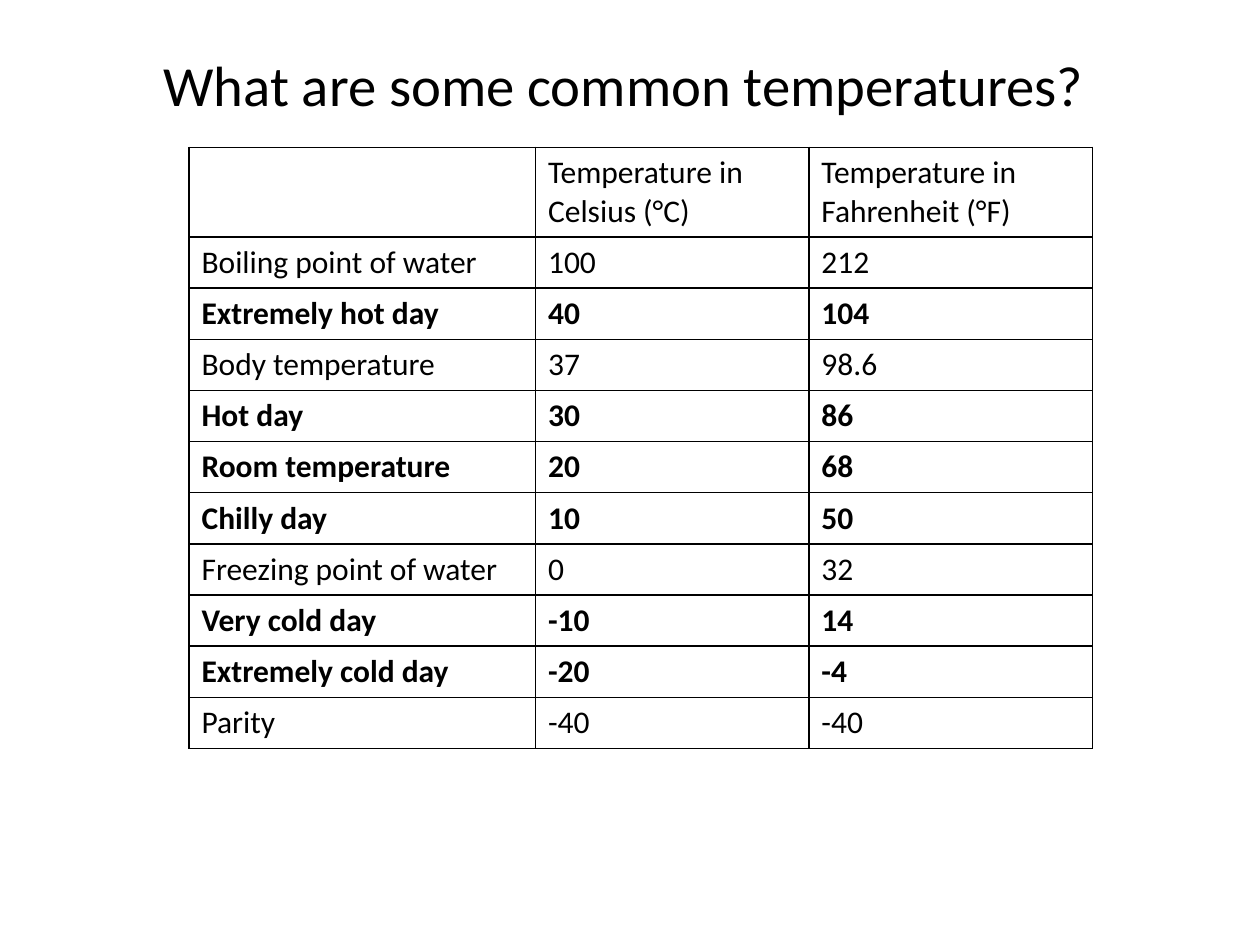
from lxml.etree import SubElement
from pptx import Presentation
from pptx.dml.color import RGBColor as Color
from pptx.enum.text import MSO_ANCHOR as Anchor, PP_ALIGN as Align
from pptx.oxml.ns import qn
from pptx.util import Inches, Pt

# Content
TITLE = "What are some common temperatures? "
HEADER = ("", "Temperature in Celsius (°C)", "Temperature in Fahrenheit (°F)")
TEMPERATURES = [  # label, Celsius, Fahrenheit, bold
    ("Boiling point of water", "100", "212", False),
    ("Extremely hot day", "40", "104", True),
    ("Body temperature", "37", "98.6", False),
    ("Hot day", "30", "86", True),
    ("Room temperature", "20", "68", True),
    ("Chilly day", "10", "50", True),
    ("Freezing point of water", "0", "32", False),
    ("Very cold day", "-10", "14", True),
    ("Extremely cold day", "-20", "-4", True),
    ("Parity", "-40", "-40", False),
]

# Look and layout
THEME = {"font": "Calibri", "ink": "000000", "title": 32.4, "body": 18, "border": 1}
COLUMN_WIDTHS = (2.75, 2.17, 2.25)
HEADER_HEIGHT, ROW_HEIGHT = 0.7, 0.406
TABLE_LEFT, TABLE_TOP = 1.5, 1.17
TITLE_BOX = (0.75, 0.33, 8.5, 0.67)


def write(para, text, size, bold=False):
    span = para.add_run()
    span.text = text
    formats = {"name": THEME["font"], "size": Pt(size), "bold": bold}
    for name, value in formats.items():
        setattr(span.font, name, value)
    span.font.color.rgb = Color.from_string(THEME["ink"])


def add_borders(cell):
    properties = cell._tc.get_or_add_tcPr()
    for side in ("lnL", "lnR", "lnT", "lnB"):
        line = SubElement(properties, qn(f"a:{side}"), w=str(Pt(THEME["border"])))
        fill = SubElement(line, qn("a:solidFill"))
        SubElement(fill, qn("a:srgbClr"), val=THEME["ink"])


def add_temperature_table(page):
    rows = [(*HEADER, False), *TEMPERATURES]
    heights = [HEADER_HEIGHT] + [ROW_HEIGHT] * len(TEMPERATURES)
    frame = (TABLE_LEFT, TABLE_TOP, sum(COLUMN_WIDTHS), sum(heights))
    table = page.shapes.add_table(
        len(rows), len(COLUMN_WIDTHS), *map(Inches, frame)).table
    table.first_row = table.horz_banding = False

    for column, width in zip(table.columns, COLUMN_WIDTHS):
        column.width = Inches(width)
    for row, height, (*texts, bold) in zip(table.rows, heights, rows):
        row.height = Inches(height)
        for cell, text in zip(row.cells, texts):
            add_borders(cell)
            cell.fill.background()
            if text:
                write(cell.text_frame.paragraphs[0], text, THEME["body"], bold)


def add_title(page):
    box = page.shapes.add_textbox(*map(Inches, TITLE_BOX))
    formats = {"word_wrap": True, "vertical_anchor": Anchor.MIDDLE}
    for name, value in formats.items():
        setattr(box.text_frame, name, value)
    para = box.text_frame.paragraphs[0]
    para.alignment = Align.CENTER
    write(para, TITLE, THEME["title"])


def main():
    deck = Presentation()
    deck.slide_width, deck.slide_height = Inches(10), Inches(7.5)
    page = deck.slides.add_slide(deck.slide_layouts[6])
    add_temperature_table(page)
    add_title(page)
    deck.save("out.pptx")


if __name__ == "__main__":
    main()
